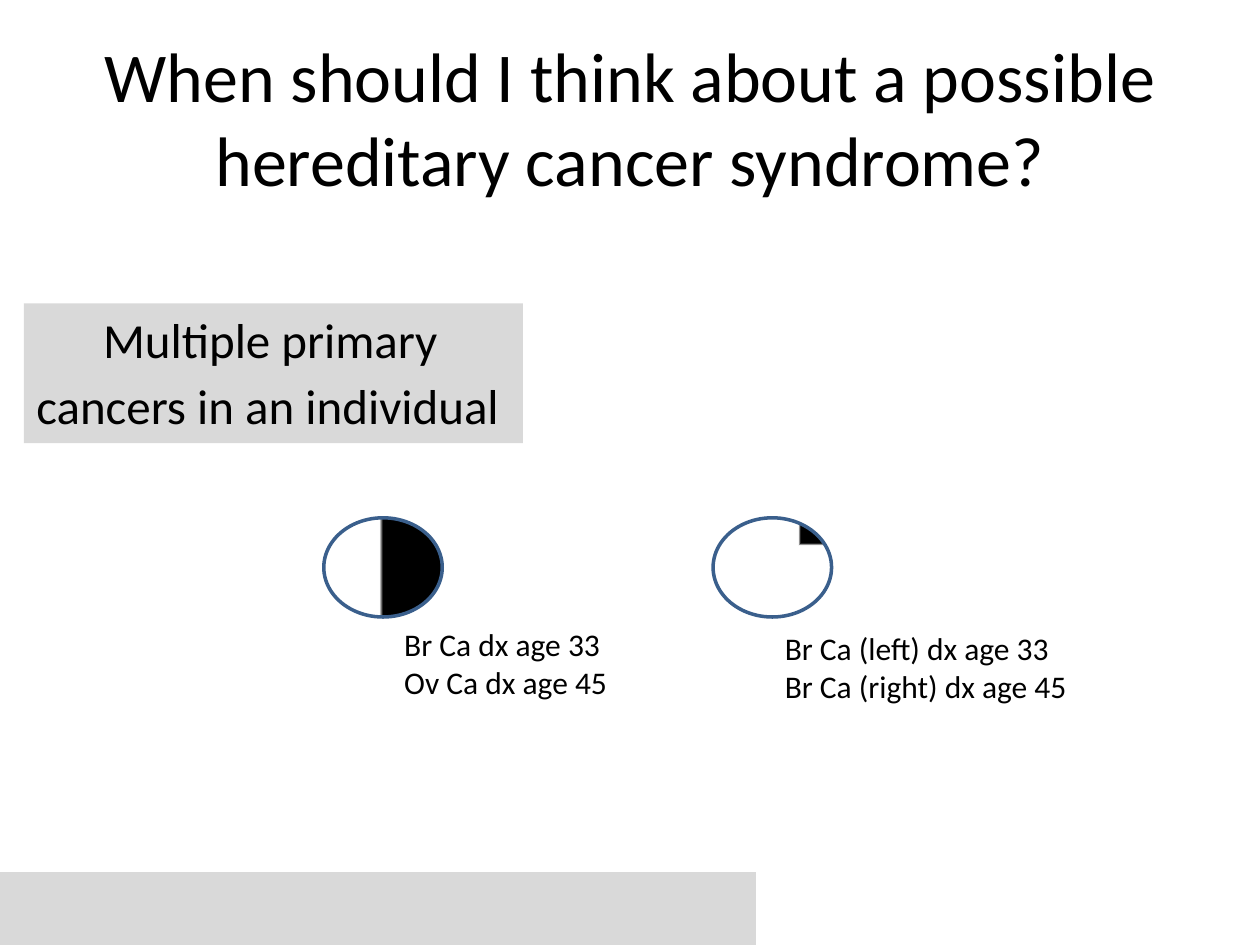
from dataclasses import dataclass
from lxml.etree import SubElement
from pptx import Presentation
from pptx.dml.color import RGBColor
from pptx.enum.shapes import MSO_SHAPE
from pptx.enum.text import MSO_ANCHOR, MSO_AUTO_SIZE, PP_ALIGN
from pptx.oxml.ns import qn
from pptx.util import Inches, Pt


@dataclass(frozen=True)
class Theme:
    """Colours, font and type sizes of the slide."""
    ink: str = "000000"
    paper: str = "FFFFFF"
    panel: str = "D9D9D9"
    outline: str = "3A5F8C"
    font: str = "Calibri"
    title: int = 40
    label: int = 28
    gap: int = 32
    caption: int = 18


THEME = Theme()
W, H = 10, 7.5


def box(x, y, w, h):
    """Turn shares of the slide's size into lengths."""
    return Inches(x * W), Inches(y * H), Inches(w * W), Inches(h * H)


def write(p, text, size, color=THEME.ink, align=None):
    """Add a formatted run to a paragraph."""
    r = p.add_run()
    r.text = text
    r.font.name = THEME.font
    r.font.size = Pt(size)
    r.font.color.rgb = RGBColor.from_string(color)
    if align is not None:
        p.alignment = align


def fill_solid(sp, color):
    """Fill a shape with one colour."""
    sp.fill.solid()
    sp.fill.fore_color.rgb = RGBColor.from_string(color)


def fill_gradient(sp, stops, angle=None, corner=None):
    """Fill a shape with a linear gradient or one that spreads from a corner."""
    sp.fill.gradient()
    grad = sp.fill._xPr.find(qn("a:gradFill"))
    for child in list(grad):
        grad.remove(child)
    stop_list = SubElement(grad, qn("a:gsLst"))
    for pos, color in stops:
        gs = SubElement(stop_list, qn("a:gs"), pos=str(pos * 1000))
        SubElement(gs, qn("a:srgbClr"), val=color)
    if corner:
        way = SubElement(grad, qn("a:path"), path="rect")
        sides = {side: str(v * 1000) for side, v in zip("ltrb", corner)}
        SubElement(way, qn("a:fillToRect"), **sides)
    else:
        SubElement(grad, qn("a:lin"), ang=str(angle * 60000), scaled="0")


def add_title(s, text):
    """Place the title in its placeholder."""
    sp = s.shapes.title
    sp.left, sp.top, sp.width, sp.height = box(0.05, 0.04, 0.9, 1 / 6)
    tf = sp.text_frame
    tf.vertical_anchor = MSO_ANCHOR.MIDDLE
    write(tf.paragraphs[0], text, THEME.title, align=PP_ALIGN.CENTER)


def add_bar(s):
    """Draw the grey bar at the foot of the slide."""
    sp = s.shapes.add_shape(MSO_SHAPE.RECTANGLE, *box(0, 0.923, 0.6, 0.077))
    sp.shadow.inherit = False
    fill_solid(sp, THEME.panel)
    sp.line.fill.background()


def add_text(shapes, place):
    """Add a wrapping text box that grows with its text."""
    sp = shapes.add_textbox(*place)
    sp.text_frame.word_wrap = True
    sp.text_frame.auto_size = MSO_AUTO_SIZE.SHAPE_TO_FIT_TEXT
    return sp


def add_label(s, text):
    """Add the grey heading with an indented first line."""
    sp = add_text(s.shapes, box(0.019, 0.321, 0.396, 0.148))
    fill_solid(sp, THEME.panel)
    p = sp.text_frame.paragraphs[0]
    p._p.get_or_add_pPr().set("indent", str(Inches(0.53)))
    write(p, text, THEME.label)
    write(p, " ", THEME.gap)


def add_person(s, x, caption_at, lines, **gradient):
    """Group a pedigree symbol with its diagnoses."""
    shapes = s.shapes.add_group_shape().shapes
    sp = shapes.add_shape(MSO_SHAPE.OVAL, *box(x, 0.548, 0.094, 0.105))
    sp.shadow.inherit = False
    fill_gradient(sp, **gradient)
    sp.line.color.rgb = RGBColor.from_string(THEME.outline)
    sp.line.width = Pt(2)
    tf = add_text(shapes, box(*caption_at, 0.255, 0.095)).text_frame
    for i, line in enumerate(lines):
        p = tf.add_paragraph() if i else tf.paragraphs[0]
        write(p, line, THEME.caption)


def main():
    """Build the slide and save it."""
    prs = Presentation()
    prs.slide_width, prs.slide_height = Inches(W), Inches(H)
    s = prs.slides.add_slide(prs.slide_layouts[5])
    add_bar(s)
    add_title(s, "When should I think about a possible hereditary cancer syndrome?")
    add_label(s, "Multiple primary cancers in an individual")
    add_person(s, 0.257, (0.311, 0.655), ("Br Ca dx age 33", "Ov Ca dx age 45"),
               stops=((0, THEME.ink), (50, THEME.ink), (53, THEME.paper)), angle=180)
    add_person(s, 0.566, (0.613, 0.659),
               ("Br Ca (left) dx age 33", "Br Ca (right) dx age 45"),
               stops=((21, THEME.ink), (51, THEME.ink), (56, THEME.paper)),
               corner=(100, 0, 0, 100))
    prs.save("out.pptx")


if __name__ == "__main__":
    main()
